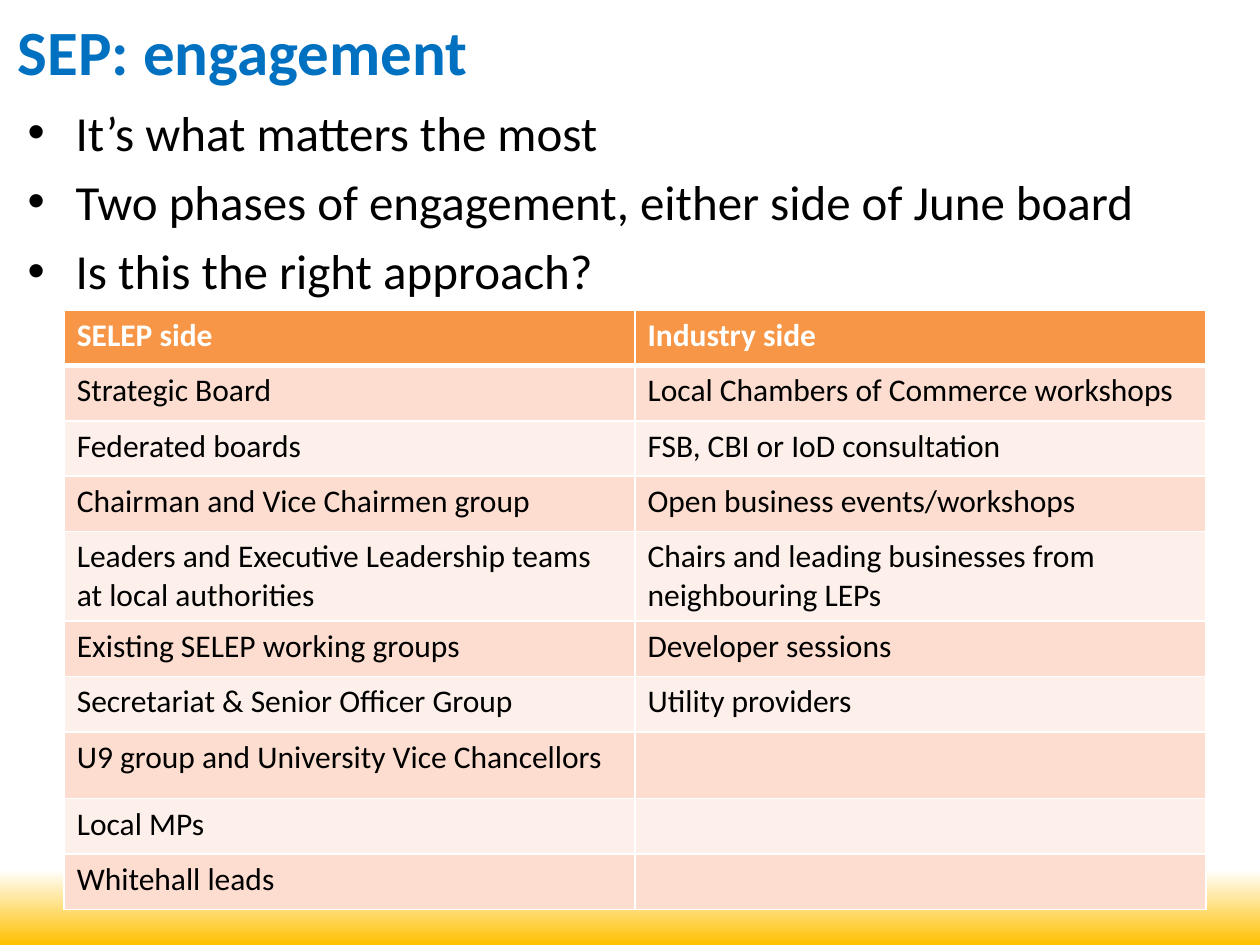
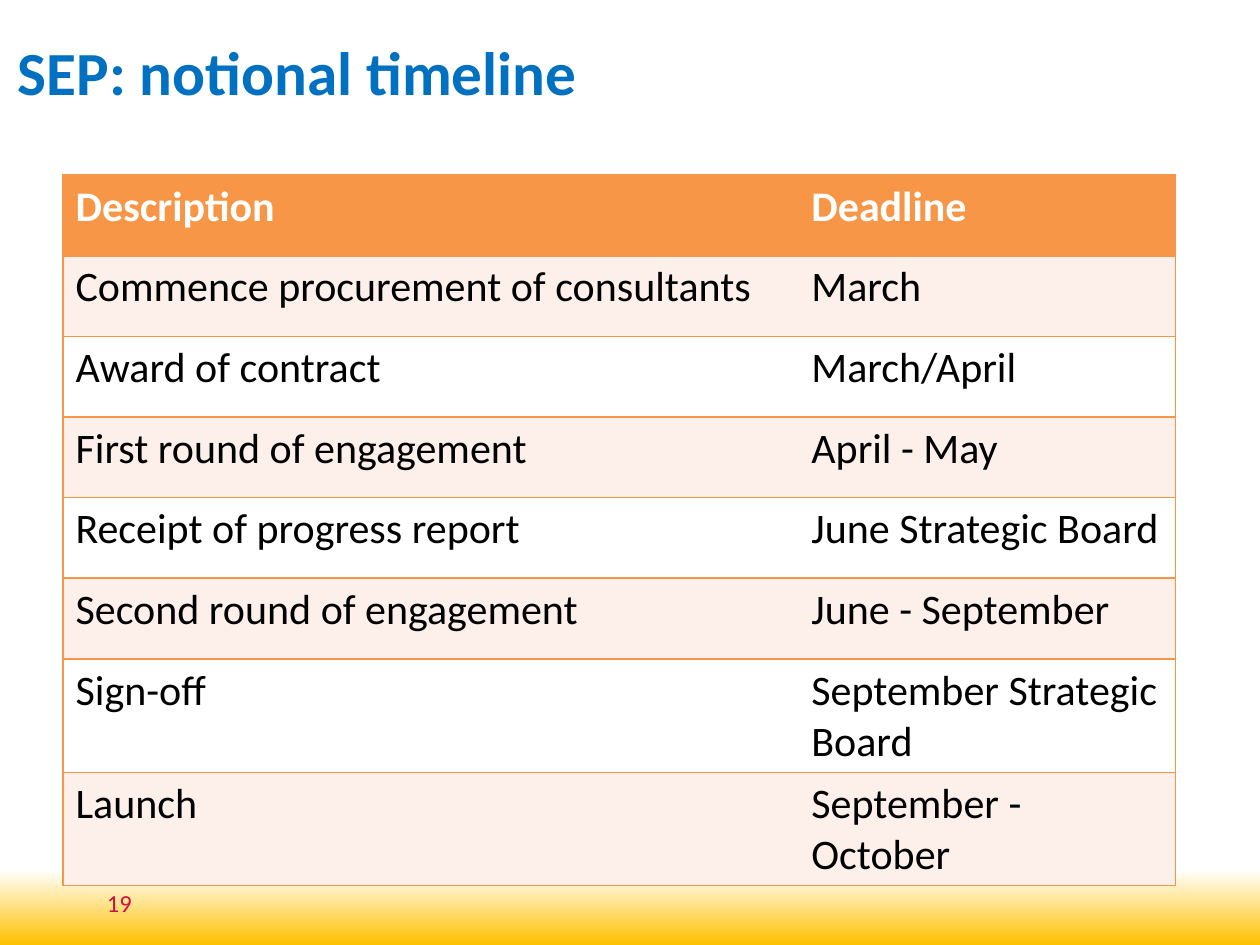
from dataclasses import dataclass, field
from typing import Optional

from lxml.etree import SubElement
from pptx import Presentation
from pptx.dml.color import RGBColor
from pptx.enum.shapes import MSO_SHAPE
from pptx.enum.text import MSO_ANCHOR, MSO_AUTO_SIZE, PP_ALIGN
from pptx.oxml import parse_xml
from pptx.oxml.ns import nsdecls, qn
from pptx.util import Inches, Pt


@dataclass(frozen=True)
class Theme:
    font: str = "Calibri"
    title: str = "0070C0"
    text: str = "000000"
    white: str = "FFFFFF"
    page_number: str = "D00F44"
    gold: str = "FFC000"
    orange: str = "F79646"
    peach: str = "FCDDCF"
    pale_peach: str = "FDEFE9"
    bullet_size: int = 28
    page_number_size: int = 14


THEME = Theme()
TITLE_ONLY, TITLE_AND_CONTENT = 5, 1


@dataclass(frozen=True)
class Grid:
    """A two-column table; row_height applies unless tall_rows names the row."""
    rows: list[tuple[str, str]]
    left: float
    top: float
    columns: tuple[float, float]
    row_height: float
    bands: tuple[str, str]
    text_size: int
    border: str
    header_rule: int = 1
    inner_verticals: bool = True
    tall_rows: dict[int, float] = field(default_factory=dict)


@dataclass(frozen=True)
class Page:
    title: str
    title_top: float
    title_size: int
    grid: Grid
    bullets: tuple[str, ...] = ()
    number: Optional[str] = None


ENGAGEMENT = Page(
    title="SEP: engagement", title_top=-0.11, title_size=36,
    bullets=(
        "It’s what matters the most",
        "Two phases of engagement, either side of June board",
        "Is this the right approach?",
    ),
    grid=Grid(
        rows=[
            ("SELEP side", "Industry side"),
            ("Strategic Board", "Local Chambers of Commerce workshops"),
            ("Federated boards", "FSB, CBI or IoD consultation"),
            ("Chairman and Vice Chairmen group", "Open business events/workshops"),
            ("Leaders and Executive Leadership teams at local authorities",
             "Chairs and leading businesses from neighbouring LEPs"),
            ("Existing SELEP working groups", "Developer sessions"),
            ("Secretariat & Senior Officer Group", "Utility providers"),
            ("U9 group and University Vice Chancellors", ""),
            ("Local MPs", ""),
            ("Whitehall leads", ""),
        ],
        left=0.51, top=2.46, columns=(4.53, 4.53),
        row_height=0.44, tall_rows={4: 0.7, 7: 0.53},
        bands=(THEME.peach, THEME.pale_peach), text_size=18,
        border=THEME.white, header_rule=3,
    ),
)

TIMELINE = Page(
    title="SEP: notional timeline", title_top=0.05, title_size=35, number="19",
    grid=Grid(
        rows=[
            ("Description", "Deadline"),
            ("Commence procurement of consultants", "March"),
            ("Award of contract", "March/April"),
            ("First round of engagement", "April - May"),
            ("Receipt of progress report", "June Strategic Board"),
            ("Second round of engagement", "June - September"),
            ("Sign-off", "September Strategic Board"),
            ("Launch", "September - October"),
        ],
        left=0.5, top=1.39, columns=(5.84, 2.99),
        row_height=0.64, tall_rows={6: 0.9, 7: 0.9},
        bands=(THEME.pale_peach, THEME.white), text_size=24,
        border=THEME.orange, inner_verticals=False,
    ),
)


def place(shape, left: float, top: float, width: float, height: float) -> None:
    shape.left, shape.top = Inches(left), Inches(top)
    shape.width, shape.height = Inches(width), Inches(height)


def add_run(paragraph, text: str, size: int, color: str, bold: bool = False) -> None:
    run = paragraph.add_run()
    run.text = text
    run.font.name = THEME.font
    run.font.size = Pt(size)
    run.font.bold = bold
    run.font.color.rgb = RGBColor.from_string(color)


def add_footer_band(slide) -> None:
    """Draw the gold fade behind everything else on the slide."""
    band = slide.shapes.add_shape(
        MSO_SHAPE.RECTANGLE, Inches(0), Inches(6.9), Inches(10.01), Inches(0.6))
    band.shadow.inherit = False
    band.line.fill.background()
    band.fill.gradient()
    band.fill.gradient_angle = 90
    for stop, color in zip(band.fill.gradient_stops, (THEME.gold, THEME.white)):
        stop.color.rgb = RGBColor.from_string(color)
    slide.shapes.element.insert(2, band.element)


def set_title(slide, page: Page) -> None:
    title = slide.shapes.title
    place(title, 0.04, page.title_top, 9, 1.02)
    frame = title.text_frame
    frame.auto_size = MSO_AUTO_SIZE.NONE
    frame.vertical_anchor = MSO_ANCHOR.MIDDLE
    frame.paragraphs[0].alignment = PP_ALIGN.LEFT
    add_run(frame.paragraphs[0], page.title, page.title_size, THEME.title, bold=True)


def set_bullets(slide, bullets: tuple[str, ...]) -> None:
    body = slide.placeholders[1]
    place(body, 0.12, 0.76, 9.06, 6.3)
    frame = body.text_frame
    frame.auto_size = MSO_AUTO_SIZE.NONE
    frame.vertical_anchor = MSO_ANCHOR.TOP
    for index, bullet in enumerate(bullets):
        paragraph = frame.add_paragraph() if index else frame.paragraphs[0]
        properties = paragraph._p.get_or_add_pPr()
        properties.set("marL", str(Inches(0.38)))
        properties.set("indent", str(-Inches(0.38)))
        paragraph.space_before = Pt(0)
        paragraph.space_after = Pt(6)
        SubElement(properties, qn("a:buChar")).set("char", "•")
        add_run(paragraph, bullet, THEME.bullet_size, THEME.text)


def add_page_number(slide, number: str) -> None:
    box = slide.shapes.add_textbox(Inches(0.75), Inches(7), Inches(2.08), Inches(0.33))
    box.text_frame.word_wrap = True
    add_run(box.text_frame.paragraphs[0], number,
            THEME.page_number_size, THEME.page_number)


def set_borders(cell, color: str, widths: dict[str, int]) -> None:
    """Set the left, right, top and bottom lines; a width of 0 hides one."""
    properties = cell._tc.get_or_add_tcPr()
    for index, side in enumerate("LRTB"):
        width = widths[side]
        fill = (f'<a:solidFill><a:srgbClr val="{color}"/></a:solidFill>'
                if width else "<a:noFill/>")
        properties.insert(index, parse_xml(
            f'<a:ln{side} {nsdecls("a")} w="{Pt(width)}">{fill}</a:ln{side}>'))


def add_grid(slide, grid: Grid) -> None:
    heights = [grid.tall_rows.get(r, grid.row_height) for r in range(len(grid.rows))]
    table = slide.shapes.add_table(
        len(grid.rows), len(grid.columns), Inches(grid.left), Inches(grid.top),
        Inches(sum(grid.columns)), Inches(sum(heights))).table
    table.first_row = table.horz_banding = False
    for column, width in zip(table.columns, grid.columns):
        column.width = Inches(width)
    inner = int(grid.inner_verticals)
    for r, (texts, height) in enumerate(zip(grid.rows, heights)):
        table.rows[r].height = Inches(height)
        header = r == 0
        fill = THEME.orange if header else grid.bands[(r - 1) % 2]
        for c, text in enumerate(texts):
            cell = table.cell(r, c)
            cell.fill.solid()
            cell.fill.fore_color.rgb = RGBColor.from_string(fill)
            set_borders(cell, grid.border, {
                "L": 1 if c == 0 else inner,
                "R": 1 if c == len(texts) - 1 else inner,
                "T": grid.header_rule if r == 1 else 1,
                "B": grid.header_rule if header else 1,
            })
            if text:
                add_run(cell.text_frame.paragraphs[0], text, grid.text_size,
                        THEME.white if header else THEME.text, bold=header)


def add_page(prs, page: Page) -> None:
    layout = TITLE_AND_CONTENT if page.bullets else TITLE_ONLY
    slide = prs.slides.add_slide(prs.slide_layouts[layout])
    add_footer_band(slide)
    set_title(slide, page)
    if page.bullets:
        set_bullets(slide, page.bullets)
    if page.number:
        add_page_number(slide, page.number)
    add_grid(slide, page.grid)


def main() -> None:
    prs = Presentation()
    prs.slide_width, prs.slide_height = Inches(10), Inches(7.5)
    for page in (ENGAGEMENT, TIMELINE):
        add_page(prs, page)
    prs.save("out.pptx")


if __name__ == "__main__":
    main()
